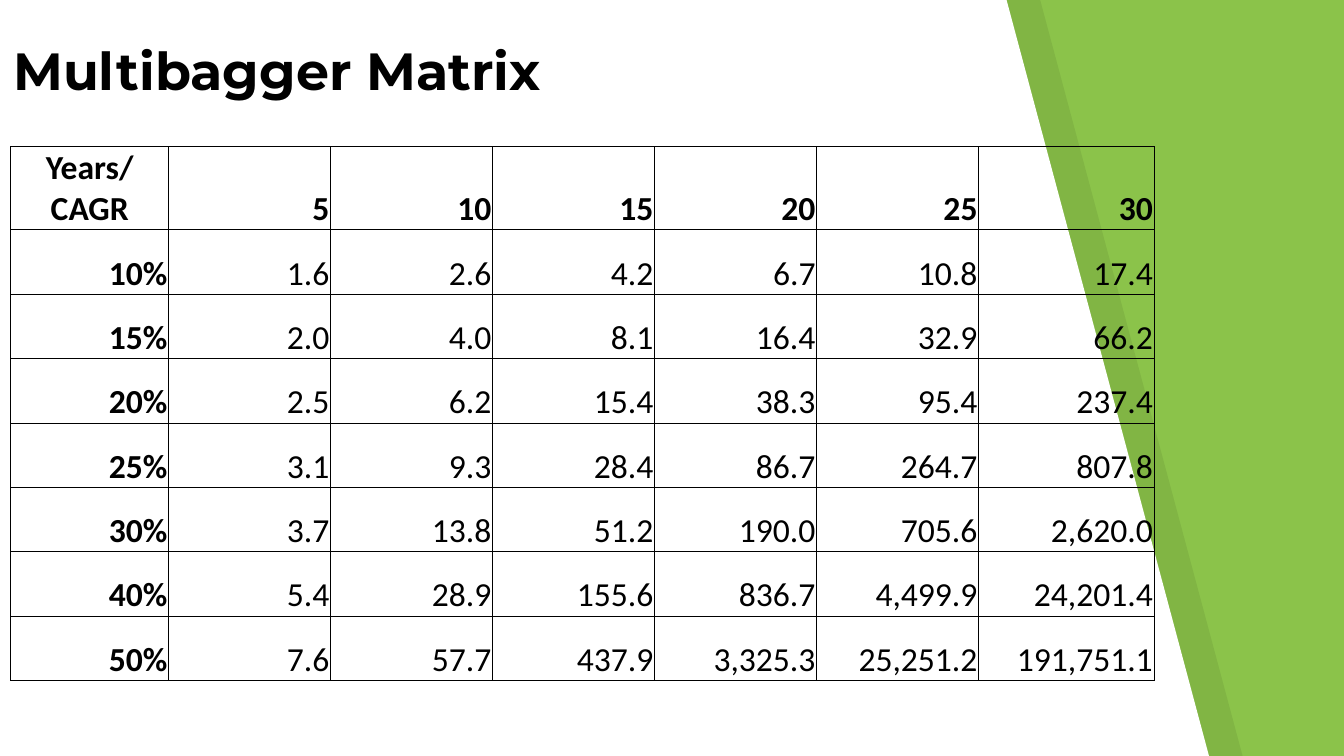
from lxml import etree
from pptx import Presentation
from pptx.dml.color import RGBColor
from pptx.enum.text import MSO_ANCHOR, PP_ALIGN
from pptx.oxml.ns import qn
from pptx.util import Inches, Pt

GREEN = RGBColor(0x8B, 0xC3, 0x4A)
WHITE = RGBColor(0xFF, 0xFF, 0xFF)
BLACK = RGBColor(0, 0, 0)

WIDTH = 10
HEIGHT = WIDTH * 9 / 16
YEARS = (5, 10, 15, 20, 25, 30)
RATES = (10, 15, 20, 25, 30, 40, 50)
COLUMNS = (1.18, *[1.21] * 5, 1.31)


def add_run(paragraph, text, font_name, size, bold):
    run = paragraph.add_run()
    run.text = text
    run.font.name = font_name
    run.font.size = Pt(size)
    run.font.bold = bold
    run.font.color.rgb = BLACK


def add_panel(slide, left, top, width, height, color, opacity=100):
    right, bottom = left + width, top + height
    slant = 1.51
    outline = slide.shapes.build_freeform(Inches(left), Inches(top))
    outline.add_line_segments([
        (Inches(x), Inches(y))
        for x, y in ((left, bottom), (right, bottom), (right - slant, 0))
    ], close=True)
    panel = outline.convert_to_shape()
    panel.shadow.inherit = False
    panel.line.fill.background()
    panel.fill.solid()
    panel.fill.fore_color.rgb = color
    if opacity < 100:
        tint = panel.fill._xPr.find(".//" + qn("a:srgbClr"))
        etree.SubElement(tint, qn("a:alpha"), val=str(opacity * 1000))


def add_title(slide, left, top, width, height):
    title = slide.shapes.add_textbox(
        Inches(left), Inches(top), Inches(width), Inches(height))
    frame = title.text_frame
    frame.word_wrap = True
    frame.vertical_anchor = MSO_ANCHOR.BOTTOM
    frame.margin_left = frame.margin_right = Inches(0.1)
    frame.margin_top = frame.margin_bottom = Inches(0.1)
    add_run(frame.paragraphs[0], "Multibagger Matrix", "Montserrat", 28, True)


def add_borders(cell):
    properties = cell._tc.get_or_add_tcPr()
    for side in ("lnL", "lnR", "lnT", "lnB"):
        border = etree.SubElement(properties, qn("a:" + side), w=str(Pt(0.5)))
        fill = etree.SubElement(border, qn("a:solidFill"))
        etree.SubElement(fill, qn("a:srgbClr"), val=str(BLACK))


def fill_cell(cell, text, bold, align):
    cell.vertical_anchor = MSO_ANCHOR.BOTTOM
    cell.margin_left = cell.margin_right = cell.margin_top = Inches(0.01)
    cell.margin_bottom = 0
    add_borders(cell)
    cell.fill.background()
    paragraph = cell.text_frame.paragraphs[0]
    paragraph.alignment = align
    add_run(paragraph, text, "Calibri", 18, bold)


def add_matrix(slide, left, top, width, height):
    rows = [["Years/ CAGR", *map(str, YEARS)]]
    for rate in RATES:
        growth = 1 + rate / 100
        rows.append([f"{rate}%", *[f"{growth ** year:,.1f}" for year in YEARS]])
    matrix = slide.shapes.add_table(
        len(rows), len(COLUMNS),
        Inches(left), Inches(top), Inches(width), Inches(height)).table
    matrix.first_row = matrix.horz_banding = False
    for column, share in zip(matrix.columns, COLUMNS):
        column.width = Inches(width * share / sum(COLUMNS))
    for r, row in enumerate(rows):
        for c, text in enumerate(row):
            corner = r == 0 and c == 0
            fill_cell(matrix.cell(r, c), text, r == 0 or c == 0,
                      PP_ALIGN.CENTER if corner else PP_ALIGN.RIGHT)


def main():
    deck = Presentation()
    deck.slide_width, deck.slide_height = Inches(WIDTH), Inches(HEIGHT)
    slide = deck.slides.add_slide(deck.slide_layouts[6])
    slide.background.fill.solid()
    slide.background.fill.fore_color.rgb = GREEN
    add_panel(slide, 0.25, -0.01, 9, 5.65, BLACK, opacity=7)
    add_panel(slide, 0, -0.01, 9, 5.65, WHITE)
    add_matrix(slide, 0.08, 1.09, 8.51, 3.83)
    add_title(slide, 0, 0.39, WIDTH * 2 / 3, 0.46)
    deck.save("out.pptx")


if __name__ == "__main__":
    main()
